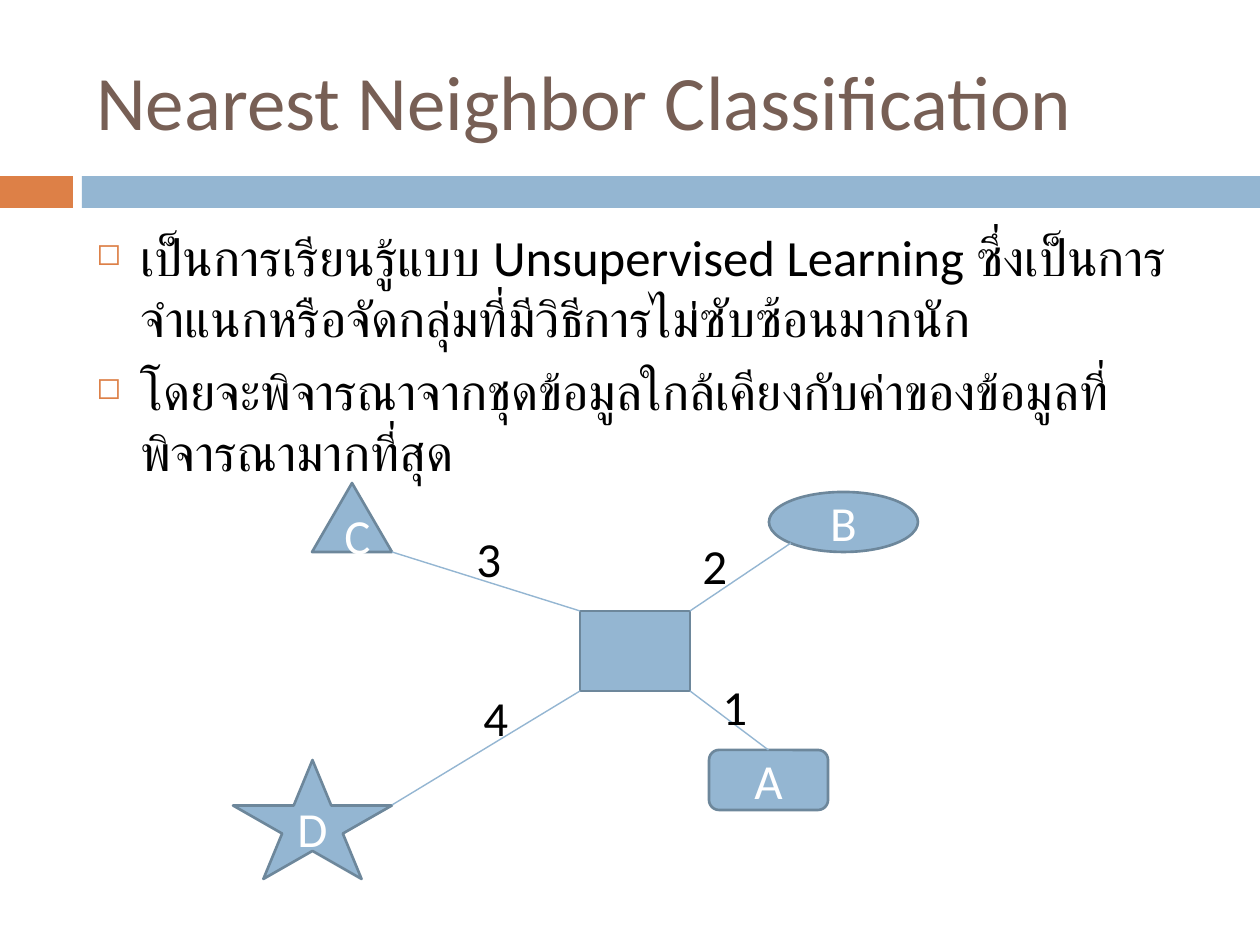
from dataclasses import dataclass
from typing import Optional

from lxml.etree import SubElement
from pptx import Presentation
from pptx.dml.color import RGBColor
from pptx.enum.shapes import MSO_CONNECTOR, MSO_SHAPE
from pptx.enum.text import MSO_ANCHOR, MSO_AUTO_SIZE, PP_ALIGN
from pptx.oxml.ns import qn
from pptx.util import Pt

EMU_PER_PX = 914400 / 126


@dataclass(frozen=True)
class Theme:
    font: str = "Calibri"
    accent: str = "DD8047"
    blue: str = "94B6D2"
    outline: str = "6D879B"
    title: str = "775F55"
    text: str = "000000"
    on_blue: str = "FFFFFF"
    title_size: int = 44
    body_size: int = 29
    diagram_size: int = 28
    outline_width: float = 1.5
    edge_width: float = 0.79


@dataclass(frozen=True)
class Box:
    left: int
    top: int
    width: int
    height: int

    def emu(self) -> list[int]:
        return [px(v) for v in (self.left, self.top, self.width, self.height)]


@dataclass(frozen=True)
class Node:
    label: str
    preset: MSO_SHAPE
    box: Box


@dataclass(frozen=True)
class Edge:
    start: tuple[int, int]
    end: tuple[int, int]
    distance: str
    distance_at: tuple[int, int]
    joined_to: Optional[str] = None


THEME = Theme()

BANDS = [
    (Box(0, 176, 73, 32), THEME.accent),
    (Box(82, 176, 1178, 32), THEME.blue),
]
POINTS = [
    "เป็นการเรียนรู้แบบ Unsupervised Learning ซึ่งเป็นการจำแนกหรือจัดกลุ่มที่มีวิธีการไม่ซับซ้อนมากนัก",
    "โดยจะพิจารณาจากชุดข้อมูลใกล้เคียงกับค่าของข้อมูลที่พิจารณามากที่สุด",
]
QUERY = Box(580, 611, 110, 80)
LEFT, RIGHT = QUERY.left, QUERY.left + QUERY.width
TOP, BOTTOM = QUERY.top, QUERY.top + QUERY.height
NODES = [
    Node("", MSO_SHAPE.RECTANGLE, QUERY),
    Node("B", MSO_SHAPE.OVAL, Box(769, 492, 149, 60)),
    Node("C", MSO_SHAPE.ISOSCELES_TRIANGLE, Box(312, 483, 80, 69)),
    Node("D", MSO_SHAPE.STAR_5_POINT, Box(233, 760, 159, 119)),
    Node("A", MSO_SHAPE.ROUNDED_RECTANGLE, Box(709, 750, 119, 60)),
]
EDGES = [
    Edge((RIGHT, BOTTOM), (768, 750), "1", (710, 670), joined_to="A"),
    Edge((RIGHT, TOP), (791, 543), "2", (690, 529)),
    Edge((LEFT, TOP), (392, 552), "3", (464, 522)),
    Edge((LEFT, BOTTOM), (392, 805), "4", (471, 681)),
]


def px(value: int) -> int:
    return round(value * EMU_PER_PX)


def style_runs(frame, size: int, color: str) -> None:
    for paragraph in frame.paragraphs:
        for run in paragraph.runs:
            run.font.name = THEME.font
            run.font.size = Pt(size)
            run.font.color.rgb = RGBColor.from_string(color)


def add_filled(slide, preset: MSO_SHAPE, box: Box, color: str):
    shape = slide.shapes.add_shape(preset, *box.emu())
    shape.shadow.inherit = False
    shape.fill.solid()
    shape.fill.fore_color.rgb = RGBColor.from_string(color)
    shape.line.fill.background()
    return shape


def add_text(slide, box: Box, lines: list[str], size: int, color: str):
    frame = slide.shapes.add_textbox(*box.emu()).text_frame
    frame.word_wrap = True
    frame.text = "\n".join(lines)
    style_runs(frame, size, color)
    return frame


def add_bullet(paragraph) -> None:
    paragraph.space_before = Pt(7)
    properties = paragraph._p.get_or_add_pPr()
    indent = px(44)
    properties.set("marL", str(indent))
    properties.set("indent", str(-indent))
    color = SubElement(properties, qn("a:buClr"))
    SubElement(color, qn("a:srgbClr"), val=THEME.accent)
    SubElement(properties, qn("a:buSzPct"), val="60000")
    SubElement(properties, qn("a:buChar"), char="◻")


def add_node(slide, node: Node):
    shape = add_filled(slide, node.preset, node.box, THEME.blue)
    shape.line.color.rgb = RGBColor.from_string(THEME.outline)
    shape.line.width = Pt(THEME.outline_width)
    if node.label:
        frame = shape.text_frame
        frame.text = node.label
        frame.vertical_anchor = MSO_ANCHOR.MIDDLE
        frame.paragraphs[0].alignment = PP_ALIGN.CENTER
        style_runs(frame, THEME.diagram_size, THEME.on_blue)
    return shape


def add_edge(slide, edge: Edge, nodes: dict) -> None:
    ends = [px(v) for v in edge.start + edge.end]
    line = slide.shapes.add_connector(MSO_CONNECTOR.STRAIGHT, *ends)
    line.line.color.rgb = RGBColor.from_string(THEME.blue)
    line.line.width = Pt(THEME.edge_width)
    SubElement(line._element.spPr, qn("a:effectLst"))
    if edge.joined_to:
        line.end_connect(nodes[edge.joined_to], 0)


def add_distance(slide, edge: Edge) -> None:
    frame = add_text(slide, Box(*edge.distance_at, 48, 72), [edge.distance],
                     THEME.diagram_size, THEME.text)
    frame.word_wrap = False
    frame.auto_size = MSO_AUTO_SIZE.SHAPE_TO_FIT_TEXT


def main() -> None:
    deck = Presentation()
    deck.slide_width, deck.slide_height = px(1260), px(945)
    slide = deck.slides.add_slide(deck.slide_layouts[6])

    # Header bands and title
    for box, color in BANDS:
        add_filled(slide, MSO_SHAPE.RECTANGLE, box, color)
    title = add_text(slide, Box(84, 32, 1124, 136), ["Nearest Neighbor Classification"],
                     THEME.title_size, THEME.title)
    title.vertical_anchor = MSO_ANCHOR.MIDDLE

    # Bulleted explanation
    body = add_text(slide, Box(84, 220, 1124, 620), POINTS, THEME.body_size, THEME.text)
    for paragraph in body.paragraphs:
        add_bullet(paragraph)

    # Neighbor diagram
    nodes = {node.label: add_node(slide, node) for node in NODES}
    for edge in EDGES:
        add_edge(slide, edge, nodes)
    for edge in EDGES:
        add_distance(slide, edge)

    deck.save("out.pptx")


if __name__ == "__main__":
    main()
